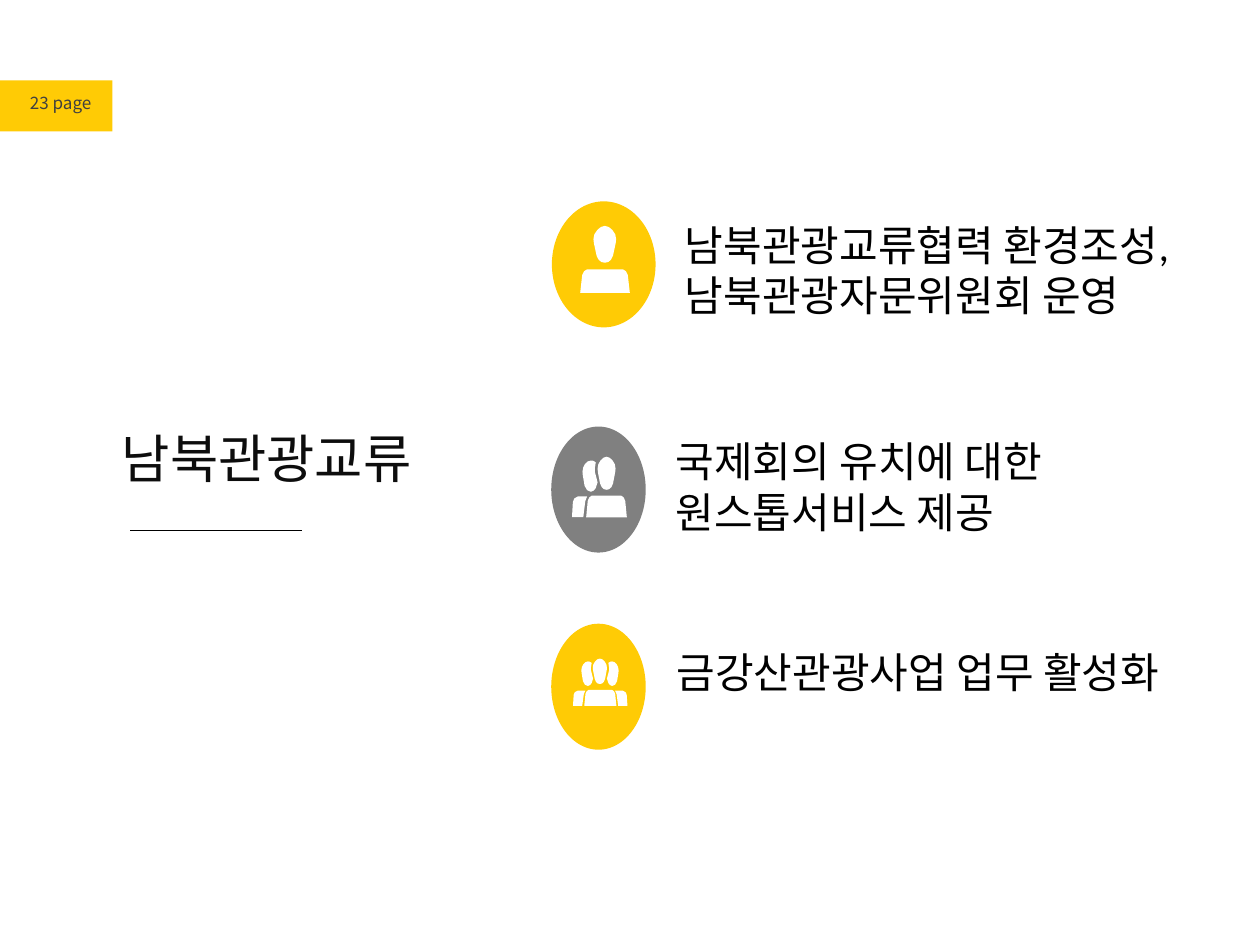
from pptx import Presentation
from pptx import util as u
from pptx.dml.color import RGBColor
from pptx.enum import shapes, text
from lxml import etree

Pt = u.Pt
SANS, BODY_FONT = "Noto Sans CJK KR", "Calibri"
YELLOW, GRAY, WHITE, BLACK = "FFCB05", "808080", "FFFFFF", "000000"
DISC_HEIGHT = 96


def mirror(points):
    return [(1 - x, y) for x, y in reversed(points)]


# Outlines in a unit box; the rear ones are cut where the front person stands.
HALF_HEAD = [(0.5, 1), (0.35, 0.98), (0.23, 0.92), (0.14, 0.81), (0.02, 0.47),
             (0, 0.36), (0.04, 0.23), (0.17, 0.11), (0.33, 0.03), (0.5, 0)]
HALF_TORSO = [(0, 1), (0.04, 0.24), (0.08, 0.08), (0.14, 0)]
HEAD = HALF_HEAD + mirror(HALF_HEAD)
TORSO = HALF_TORSO + mirror(HALF_TORSO)
REAR_HEAD = [(0.56, 0), (0.35, 0.03), (0.17, 0.11), (0.05, 0.22), (0, 0.36),
             (0.02, 0.47), (0.14, 0.81), (0.31, 0.95), (0.56, 1), (0.75, 0.96),
             (0.88, 0.88), (1, 0.7), (0.82, 0.36), (0.82, 0.24), (0.88, 0.06),
             (0.72, 0.01)]
REAR_TORSO = [(0, 1), (0.06, 0.27), (0.15, 0.1), (0.38, 0), (1, 0),
              (0.88, 0.23), (0.75, 1)]

# Each part: outline and its box relative to the disc.
ONE_PERSON = [(HEAD, (31.7, 18.7, 17.3, 28.1)), (TORSO, (21.6, 51.8, 37.8, 18))]
TWO_PEOPLE = [(REAR_TORSO, (15.8, 53.3, 11.5, 15.8)),
              (REAR_HEAD, (23.8, 25.9, 11.5, 23.8)),
              (TORSO, (26.6, 52.6, 31, 16.6)),
              (HEAD, (35.3, 23, 13.7, 25.2))]
THREE_PEOPLE = [(REAR_TORSO, (16.6, 51.1, 9.4, 11.5)),
                (REAR_HEAD, (23, 28.8, 8.9, 18.7)),
                (TORSO, (25.2, 50.4, 24.5, 12.2)),
                (HEAD, (31.7, 26.6, 10.8, 19.4)),
                (mirror(REAR_HEAD), (42.5, 28.8, 8.9, 18.7)),
                (mirror(REAR_TORSO), (48.7, 51.1, 9.4, 11.5))]

# Disc left, top, width and colour; icon; text, its offset, width and wrapping.
ITEMS = [
    ((420.5, 153.4, 79), YELLOW, ONE_PERSON,
     "남북관광교류협력 환경조성, 남북관광자문위원회 운영", (94.3, 10), 434, True),
    ((420, 325, 72), GRAY, TWO_PEOPLE,
     "국제회의 유치에 대한 원스톱서비스 제공", (87.6, 3.5), 359, True),
    ((420, 475.2, 72), YELLOW, THREE_PEOPLE,
     "금강산관광사업 업무 활성화", (88.3, 13.7), 417, False),
]


def rgb(value):
    return RGBColor.from_string(value)


def paint(shape, color):
    shape.fill.solid()
    shape.fill.fore_color.rgb = rgb(color)
    shape.line.fill.background()
    shape.shadow.inherit = False


def write(shape, content, size, font, color, wrap=True):
    frame = shape.text_frame
    frame.text = content
    frame.word_wrap = wrap
    frame.auto_size = text.MSO_AUTO_SIZE.SHAPE_TO_FIT_TEXT
    frame.vertical_anchor = text.MSO_ANCHOR.TOP
    paragraph = frame.paragraphs[0]
    paragraph.alignment = text.PP_ALIGN.LEFT
    paragraph.font.size = Pt(size)
    paragraph.font.name = font
    paragraph.font.color.rgb = rgb(color)
    return paragraph


def add_page_tab(slide, left, top, width, height):
    tab = slide.shapes.add_shape(shapes.MSO_SHAPE.RECTANGLE,
                                 Pt(left), Pt(top), Pt(width), Pt(height))
    paint(tab, YELLOW)
    label = slide.shapes.add_textbox(Pt(left + 15.8), Pt(top - 2.2),
                                     Pt(width - 15.8), Pt(31))
    write(label, "23 page", 13, SANS, "404040").line_spacing = 1.5


def add_title(slide, left, top, width, height):
    """Place the title and the rule beneath it."""
    title = slide.shapes.title
    title.left, title.top = Pt(left), Pt(top)
    title.width, title.height = Pt(width), Pt(height)
    write(title, "남북관광교류", 40, SANS, "0D0D0D")
    rule_left, rule_top = left + 13.7, top + 82.8
    rule = slide.shapes.add_connector(
        shapes.MSO_CONNECTOR.STRAIGHT, Pt(rule_left), Pt(rule_top),
        Pt(rule_left + 131), Pt(rule_top))
    rule.line.color.rgb = rgb(BLACK)
    rule.line.width = Pt(0.75)
    namespace = rule.element.nsmap["a"]
    etree.SubElement(rule.element.spPr, f"{{{namespace}}}effectLst")


def add_people(slide, left, top, parts):
    """Draw all parts of an icon as one freeform."""
    builder = None
    for outline, (x, y, width, height) in parts:
        points = [(Pt(left + x + px * width), Pt(top + y + py * height))
                  for px, py in outline]
        if builder is None:
            builder = slide.shapes.build_freeform(*points[0])
        else:
            builder.move_to(*points[0])
        builder.add_line_segments(points[1:], close=True)
    paint(builder.convert_to_shape(), WHITE)


def add_item(slide, disc_box, color, people, content, offset, text_width, wrap):
    left, top, width = disc_box
    disc = slide.shapes.add_shape(shapes.MSO_SHAPE.OVAL, Pt(left), Pt(top),
                                  Pt(width), Pt(DISC_HEIGHT))
    paint(disc, color)
    add_people(slide, left, top, people)
    label = slide.shapes.add_textbox(Pt(left + offset[0]), Pt(top + offset[1]),
                                     Pt(text_width), Pt(85 if wrap else 46))
    write(label, content, 32, BODY_FONT, BLACK, wrap)


def main():
    presentation = Presentation()
    presentation.slide_width, presentation.slide_height = Pt(960), Pt(720)
    slide = presentation.slides.add_slide(presentation.slide_layouts[5])
    add_page_tab(slide, 0, 61.2, 85.7, 38.9)
    add_title(slide, 85.7, 321.1, 260.6, 55.4)
    for item in ITEMS:
        add_item(slide, *item)
    presentation.save("out.pptx")


if __name__ == "__main__":
    main()
